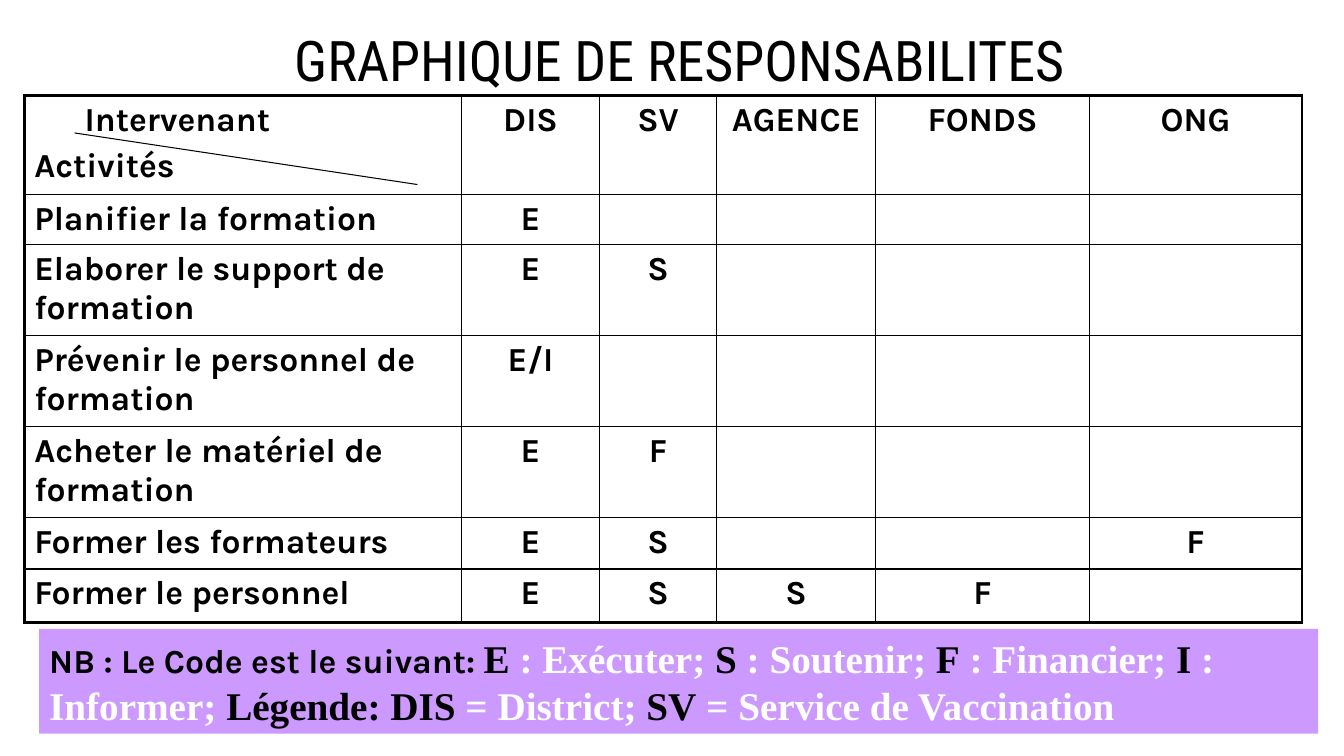
from dataclasses import dataclass

from lxml import etree
from pptx import Presentation
from pptx.dml.color import RGBColor
from pptx.enum.shapes import MSO_CONNECTOR, MSO_SHAPE
from pptx.enum.text import MSO_ANCHOR, MSO_AUTO_SIZE, PP_ALIGN
from pptx.oxml.ns import qn
from pptx.util import Cm, Pt

LEFT, CENTER = PP_ALIGN.LEFT, PP_ALIGN.CENTER
TOP = MSO_ANCHOR.TOP
NO_AUTOFIT = MSO_AUTO_SIZE.NONE
STRAIGHT = MSO_CONNECTOR.STRAIGHT
RECTANGLE = MSO_SHAPE.RECTANGLE
TITLE_ONLY = 5

COLORS = {"ink": "000000", "light": "FFFFFF", "note": "CC99FF"}
TITLE_FONT, BODY_FONT, NOTE_FONT = "Roboto Condensed", "Karla", "Times New Roman"
INNER_BORDER, OUTER_BORDER = Pt(1), Pt(2.25)

COLUMN_WIDTHS = [11.02, 3.48, 2.95, 4.01, 5.38, 5.36]
STAKEHOLDERS = ["DIS", "SV", "AGENCE", "FONDS", "ONG"]
HEADER_HEIGHT = 2.49


@dataclass
class Activity:
    name: str
    codes: list[str]
    height: float


@dataclass
class NotePart:
    text: str
    color: str
    font: str = NOTE_FONT
    size: int = 28
    bold: bool = True


ACTIVITIES = [
    Activity("Planifier la formation", ["E", "", "", "", ""], 1.27),
    Activity("Elaborer le support de formation", ["E", "S", "", "", ""], 2.29),
    Activity("Prévenir le personnel de formation", ["E/I", "", "", "", ""], 2.29),
    Activity("Acheter le matériel de formation", ["E", "F", "", "", ""], 2.29),
    Activity("Former les formateurs", ["E", "S", "", "", "F"], 1.3),
    Activity("Former le personnel", ["E", "S", "S", "F", ""], 1.35),
]

NOTE_PARTS = [
    NotePart("NB : Le Code est le suivant: ", "ink", BODY_FONT, 24),
    NotePart("E", "ink"),
    NotePart(" : Exécuter; ", "light"),
    NotePart("S", "ink"),
    NotePart(" : Soutenir;", "light"),
    NotePart(" F", "ink"),
    NotePart(" : Financier; ", "light"),
    NotePart("I", "ink"),
    NotePart(" : Informer; ", "light"),
    NotePart("Légende: DIS", "ink"),
    NotePart(" = District; ", "light"),
    NotePart("SV", "ink"),
    NotePart(" = Service de Vaccination", "light"),
]


def color(name: str) -> RGBColor:
    return RGBColor.from_string(COLORS[name])


def format_span(span, font: str, size: int, tint: str, bold: bool) -> None:
    span.font.name = font
    span.font.size = Pt(size)
    span.font.bold = bold
    span.font.color.rgb = color(tint)


def set_border(cell, side: str, width: int) -> None:
    properties = cell._tc.get_or_add_tcPr()
    line = etree.SubElement(properties, qn(f"a:ln{side}"), w=str(width))
    fill = etree.SubElement(line, qn("a:solidFill"))
    etree.SubElement(fill, qn("a:srgbClr"), val=COLORS["ink"])


def fill_cell(cell, text: str, alignment) -> None:
    cell.text_frame.text = text
    cell.vertical_anchor = TOP
    for para in cell.text_frame.paragraphs:
        para.alignment = alignment
        para.space_before = Pt(4.8)
        for span in para.runs:
            format_span(span, BODY_FONT, 24, "ink", True)


def add_title(page) -> None:
    title = page.shapes.title
    title.left, title.top, title.width, title.height = Cm(5.54), Cm(0.51), Cm(23.16), Cm(1.9)
    frame = title.text_frame
    frame.text = "GRAPHIQUE DE RESPONSABILITES"
    frame.auto_size = NO_AUTOFIT
    frame.vertical_anchor = TOP
    para = frame.paragraphs[0]
    para.alignment = CENTER
    format_span(para.runs[0], TITLE_FONT, 40, "ink", False)


def add_responsibility_table(page) -> None:
    rows = [["Intervenant\nActivités", *STAKEHOLDERS]]
    rows += [[activity.name, *activity.codes] for activity in ACTIVITIES]
    heights = [HEADER_HEIGHT] + [activity.height for activity in ACTIVITIES]
    last_row, last_column = len(rows) - 1, len(COLUMN_WIDTHS) - 1

    table = page.shapes.add_table(
        len(rows), len(COLUMN_WIDTHS), Cm(0.61), Cm(2.41), Cm(sum(COLUMN_WIDTHS)), Cm(sum(heights))
    ).table
    table.first_row = table.horz_banding = False
    for column, width in zip(table.columns, COLUMN_WIDTHS):
        column.width = Cm(width)

    for row_index, texts in enumerate(rows):
        table.rows[row_index].height = Cm(heights[row_index])
        for column_index, text in enumerate(texts):
            cell = table.cell(row_index, column_index)
            fill_cell(cell, text, CENTER if column_index else LEFT)
            on_edge = {
                "L": column_index == 0,
                "R": column_index == last_column,
                "T": row_index == 0,
                "B": row_index == last_row,
            }
            for side, outer in on_edge.items():
                set_border(cell, side, OUTER_BORDER if outer else INNER_BORDER)
            cell.fill.background()

    # Shift the upper heading of the split corner cell
    heading = table.cell(0, 0).text_frame.paragraphs[0]
    heading._p.get_or_add_pPr().set("marL", str(Cm(1.27)))


def add_corner_line(page) -> None:
    line = page.shapes.add_connector(STRAIGHT, Cm(1.88), Cm(3.35), Cm(10.52), Cm(4.65))
    line.line.color.rgb = color("ink")
    line.line.width = Pt(0.75)
    etree.SubElement(line._element.spPr, qn("a:effectLst"))


def add_note(page) -> None:
    box = page.shapes.add_shape(RECTANGLE, Cm(0.99), Cm(15.85), Cm(32.23), Cm(2.64))
    box.shadow.inherit = False
    box.fill.solid()
    box.fill.fore_color.rgb = color("note")
    box.line.fill.background()
    frame = box.text_frame
    frame.word_wrap = True
    frame.vertical_anchor = TOP
    para = frame.paragraphs[0]
    para.alignment = LEFT
    for part in NOTE_PARTS:
        span = para.add_run()
        span.text = part.text
        format_span(span, part.font, part.size, part.color, part.bold)


def main() -> None:
    deck = Presentation()
    deck.slide_width, deck.slide_height = Cm(33.87), Cm(19.05)
    page = deck.slides.add_slide(deck.slide_layouts[TITLE_ONLY])
    page.background.fill.solid()
    page.background.fill.fore_color.rgb = color("light")

    add_title(page)
    add_responsibility_table(page)
    add_corner_line(page)
    add_note(page)
    deck.save("out.pptx")


if __name__ == "__main__":
    main()
